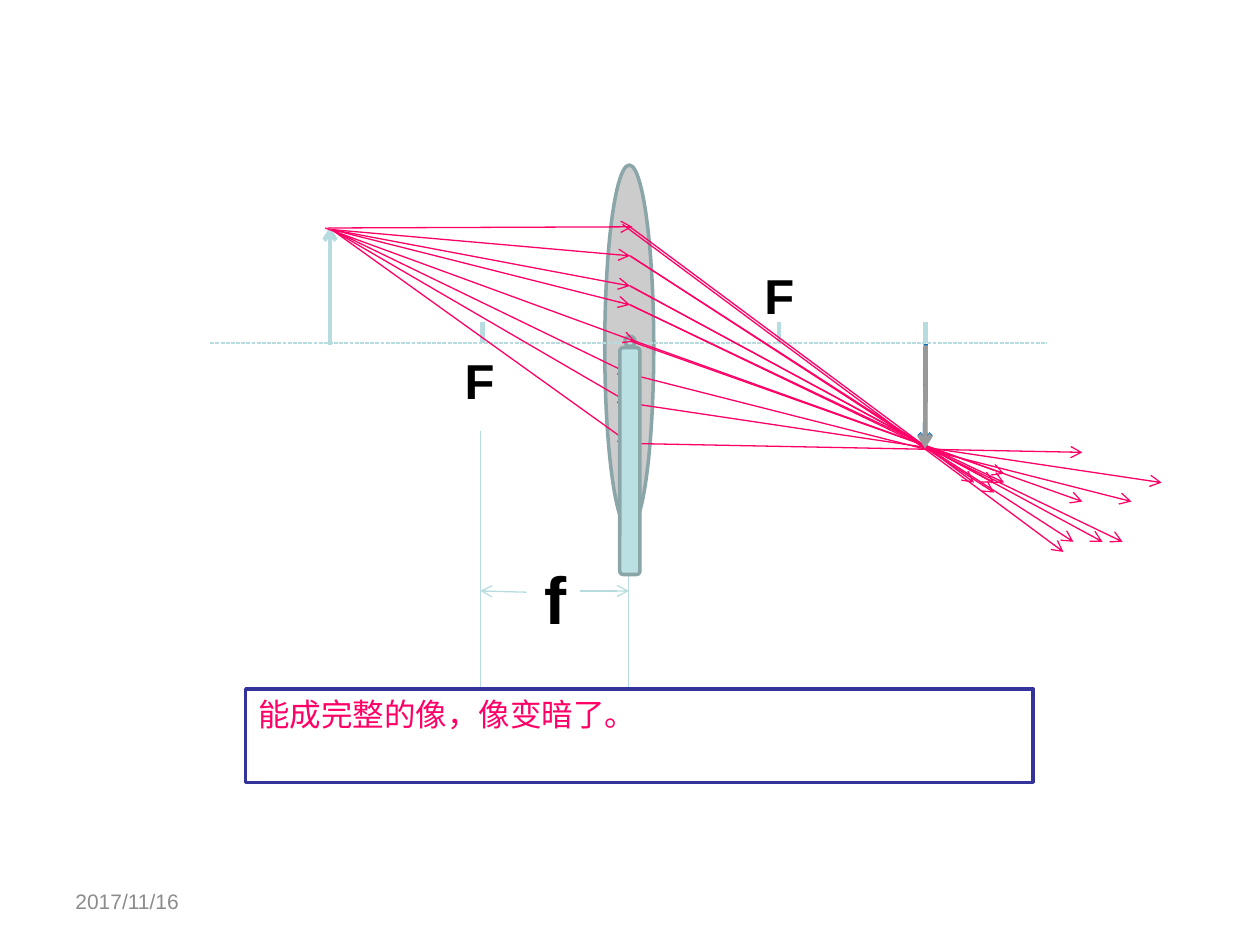
from lxml.etree import SubElement
from pptx import Presentation
from pptx.dml.color import RGBColor
from pptx.enum.dml import MSO_LINE_DASH_STYLE as Dash
from pptx.enum.shapes import MSO_CONNECTOR as Connector, MSO_SHAPE as Shape
from pptx.enum.text import MSO_ANCHOR as Anchor
from pptx.oxml.ns import qn
from pptx.util import Pt

WHITE = RGBColor(0xFF, 0xFF, 0xFF)
BLACK = RGBColor(0, 0, 0)
DATE_GREY = RGBColor(0x8C, 0x8C, 0x8C)
LENS_GREY = RGBColor(0xCC, 0xCC, 0xCC)
IMAGE_GREY = RGBColor(0x99, 0x99, 0x99)
OUTLINE = RGBColor(0x8A, 0xA6, 0xA8)
PALE_TEAL = RGBColor(0xBB, 0xE0, 0xE3)
GUIDE = RGBColor(0xB6, 0xDC, 0xDF)
BLUE = RGBColor(0x00, 0x70, 0xC0)
NAVY = RGBColor(0x33, 0x33, 0x99)
RAY = RGBColor(0xFF, 0x00, 0x66)

AXIS_Y = 196
LENS_X = 360
FOCUS_X = 274.5
OBJECT_X = 188.6
OBJECT_TIP = (189.5, 131.2)

# Each ray: where it meets the lens, and where it ends when drawn in full
LONG_RAYS = [
    ((355.7, 128.2), (607.7, 315.4)),
    ((LENS_X, 146.2), (613.4, 309.6)),
    ((LENS_X, 163.4), (630, 309.6)),
    ((LENS_X, 174.2), (641.5, 309.6)),
    ((LENS_X, 253.4), (618.5, 258.5)),
    ((LENS_X, 230.4), (663.8, 275.8)),
    ((LENS_X, 213.8), (646.6, 286.6)),
    ((360.7, 195.1), (618.5, 286.6)),
]
# Rays through the uncovered half, drawn again above the cover
UNBLOCKED_RAYS = [
    ((LENS_X, 129.6), (556.6, 275.8)),
    ((LENS_X, 146.2), (568.1, 281.5)),
    ((LENS_X, 163.4), (568.1, 275.8)),
    ((LENS_X, 174.2), (573.8, 275.8)),
    ((361.4, 194.4), (573.8, 270.7)),
]


def write(frame, text, size=18, color=BLACK, bold=False, anchor=Anchor.TOP, wrap=True):
    frame.word_wrap = wrap
    frame.vertical_anchor = anchor
    run = frame.paragraphs[0].add_run()
    run.text = text
    run.font.name = "Arial"
    run.font.size = Pt(size)
    run.font.bold = bold
    run.font.color.rgb = color


class Diagram:
    """Draws on one slide; all lengths are in points."""

    def __init__(self, slide):
        self.shapes = slide.shapes

    def label(self, text, left, top, width, height, **style):
        box = self.shapes.add_textbox(Pt(left), Pt(top), Pt(width), Pt(height))
        write(box.text_frame, text, **style)

    def solid(self, kind, left, top, width, height, fill, outline=OUTLINE):
        body = self.shapes.add_shape(kind, Pt(left), Pt(top), Pt(width), Pt(height))
        body.shadow.inherit = False
        body.fill.solid()
        body.fill.fore_color.rgb = fill
        body.line.color.rgb = outline
        body.line.width = Pt(2)
        return body

    def line(self, start, end, color=GUIDE, width=0.75, arrow=False, dash=None):
        link = self.shapes.add_connector(
            Connector.STRAIGHT, *(Pt(v) for v in (*start, *end)))
        link.line.color.rgb = color
        link.line.width = Pt(width)
        if dash:
            link.line.dash_style = dash
        properties = link._element.spPr
        if arrow:
            SubElement(properties.find(qn("a:ln")), qn("a:tailEnd"), type="arrow")
        SubElement(properties, qn("a:effectLst"))

    def ray(self, start, end):
        self.line(start, end, color=RAY, arrow=True)


def draw_lens(diagram):
    diagram.label("F", 429.8, 148.3, 28, 41, size=28, bold=True)
    diagram.solid(Shape.OVAL, 345.6, 94.3, 28, 208, LENS_GREY)
    diagram.line((120.2, AXIS_Y), (598.3, AXIS_Y), dash=Dash.SQUARE_DOT)
    for x in (275.8, 445, OBJECT_X, 528.8):
        diagram.line((x, AXIS_Y - 11.7), (x, AXIS_Y), width=2.5)
    diagram.label("F", 258.5, 196.6, 28, 41, size=28, bold=True)
    for x in (FOCUS_X, 359.3):
        diagram.line((x, 246.2), (x, 398.2))
    diagram.line((331.2, 337.7), (359.3, 337.7), arrow=True)
    diagram.line((301, 338.4), (FOCUS_X, 337.7), arrow=True)
    diagram.label("f", 303.8, 315.4, 27.4, 53.3, size=38, bold=True, wrap=False)
    diagram.solid(Shape.OVAL, 357.1, 192.2, 5.8, 5.8, PALE_TEAL)


def draw_rays(diagram):
    diagram.line((OBJECT_X, 197.3), (OBJECT_X, 129.6), width=2.5, arrow=True)
    diagram.line((529, 196.6), (528.6, 255.6), color=BLUE, width=2.5, arrow=True)
    diagram.ray((187.2, 130.3), (361.4, 129.6))
    diagram.ray((185.8, 130.3), (362.9, 195.1))
    for meeting, _ in LONG_RAYS[1:-1]:
        diagram.ray(OBJECT_TIP, meeting)
    for meeting, end in LONG_RAYS:
        diagram.ray(meeting, end)
    diagram.solid(Shape.ROUNDED_RECTANGLE, 354.2, 198.7, 11.5, 129.6, PALE_TEAL)
    for meeting, end in UNBLOCKED_RAYS:
        diagram.ray(meeting, end)
    diagram.line((529, 197.3), (528.6, 256.3), color=IMAGE_GREY, width=2.5, arrow=True)


def main():
    deck = Presentation()
    deck.slide_width, deck.slide_height = Pt(720), Pt(540)
    diagram = Diagram(deck.slides.add_slide(deck.slide_layouts[6]))
    diagram.label("2017/11/16", 36, 500.4, 168, 28.8, size=12,
                  color=DATE_GREY, anchor=Anchor.MIDDLE)
    draw_lens(diagram)
    draw_rays(diagram)
    conclusion = diagram.solid(Shape.RECTANGLE, 140.4, 393.8, 450, 53.3, WHITE, NAVY)
    write(conclusion.text_frame, "能成完整的像，像变暗了。", color=RAY)
    conclusion.text_frame.paragraphs[0].alignment = 1
    deck.save("out.pptx")


if __name__ == "__main__":
    main()
